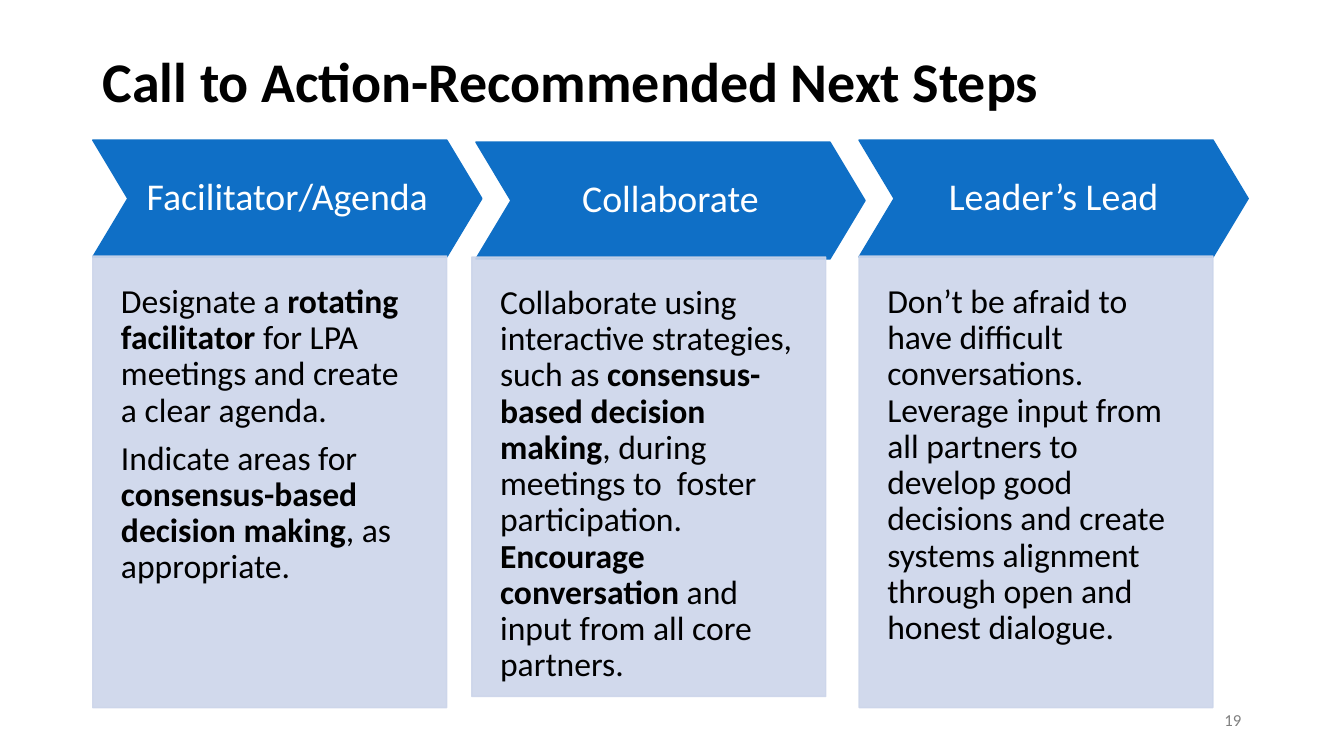
from lxml.etree import SubElement
from pptx import Presentation
from pptx.dml.color import RGBColor
from pptx.enum.shapes import MSO_SHAPE as Shape
from pptx.enum.text import MSO_ANCHOR as Anchor, PP_ALIGN as Align
from pptx.oxml.ns import qn
from pptx.util import Inches, Pt

TITLE = "Call to Action-Recommended Next Steps"
PAGE_NUMBER = "19"
STEPS = [
    {
        "heading": "Facilitator/Agenda",
        "head_at": (0.92, 1.39),
        "body_at": (0.92, 2.54),
        "body_height": 4.48,
        "body": [
            [("Designate a ", False), ("rotating facilitator", True),
             (" for LPA meetings and create a clear agenda.", False)],
            [("Indicate areas for ", False),
             ("consensus-based decision making", True),
             (", as appropriate.", False)],
        ],
    },
    {
        "heading": "Collaborate",
        "head_at": (4.72, 1.41),
        "body_at": (4.68, 2.55),
        "body_height": 4.36,
        "body": [
            [("Collaborate using interactive strategies, such as ", False),
             ("consensus-based decision making", True),
             (", during meetings to  foster participation. ", False),
             ("Encourage conversation ", True),
             ("and input from all core partners.", False)],
        ],
    },
    {
        "heading": "Leader’s Lead",
        "head_at": (8.52, 1.39),
        "body_at": (8.52, 2.54),
        "body_height": 4.48,
        "body": [
            [("Don’t be afraid to have difficult conversations. Leverage input "
              "from all partners to develop good decisions and create systems "
              "alignment through open and honest dialogue.", False)],
        ],
    },
]

COLORS = {"text": "000000", "head": "0F6FC6", "head_text": "FFFFFF",
          "body": "CCD5EA", "number": "808080"}
FONT = "Calibri"
HEAD_WIDTH, HEAD_HEIGHT, HEAD_POINT = 3.86, 1.16, 0.3
BODY_WIDTH = 3.51
BODY_OPACITY = 90
LINE_SPACING = 0.9
SPACE_AFTER = 0.35


def color(name):
    return RGBColor.from_string(COLORS[name])


def set_frame(shape, anchor, insets):
    frame = shape.text_frame
    frame.word_wrap = True
    frame.vertical_anchor = anchor
    (frame.margin_left, frame.margin_top,
     frame.margin_right, frame.margin_bottom) = map(Inches, insets)
    return frame


def write(frame, paragraphs, size, color_name, align=Align.LEFT, after=SPACE_AFTER):
    for index, spans in enumerate(paragraphs):
        para = frame.add_paragraph() if index else frame.paragraphs[0]
        para.alignment = align
        para.line_spacing = LINE_SPACING
        para.space_after = Pt(size * after)
        para.font.name = FONT
        para.font.size = Pt(size)
        para.font.color.rgb = color(color_name)
        for text, bold in spans:
            span = para.add_run()
            span.text = text
            span.font.bold = bold


def add_text(page, at, text, size, color_name, bold=False, align=Align.LEFT):
    box = page.shapes.add_textbox(*map(Inches, at))
    frame = set_frame(box, Anchor.MIDDLE, (0.1, 0.05, 0.1, 0.05))
    write(frame, [[(text, bold)]], size, color_name, align, after=0)


def add_block(page, kind, at, size, color_name, opacity=100):
    block = page.shapes.add_shape(kind, *map(Inches, at + size))
    block.shadow.inherit = False
    block.fill.solid()
    block.fill.fore_color.rgb = color(color_name)
    block.line.color.rgb = color(color_name)
    block.line.width = Pt(1)
    if opacity < 100:
        for tint in block._element.spPr.iter(qn("a:srgbClr")):
            SubElement(tint, qn("a:alpha"), val=str(opacity * 1000))
    return block


def add_step(page, step):
    head = add_block(page, Shape.CHEVRON, step["head_at"],
                     (HEAD_WIDTH, HEAD_HEIGHT), "head")
    head.adjustments[0] = HEAD_POINT
    frame = set_frame(head, Anchor.MIDDLE, (0.14,) * 4)
    write(frame, [[(step["heading"], False)]], 27, "head_text", Align.CENTER)

    body = add_block(page, Shape.RECTANGLE, step["body_at"],
                     (BODY_WIDTH, step["body_height"]), "body", BODY_OPACITY)
    frame = set_frame(body, Anchor.TOP, (0.28, 0.28, 0.28, 0.55))
    write(frame, step["body"], 24, "text")


def main():
    deck = Presentation()
    deck.slide_width, deck.slide_height = Inches(13.33), Inches(7.5)
    page = deck.slides.add_slide(deck.slide_layouts[6])
    add_text(page, (0.92, 0.43, 11.49, 0.81), TITLE, 40, "text", bold=True)
    add_text(page, (9.53, 6.95, 2.88, 0.4), PAGE_NUMBER, 12, "number",
             align=Align.RIGHT)
    for step in STEPS:
        add_step(page, step)
    deck.save("out.pptx")


if __name__ == "__main__":
    main()
